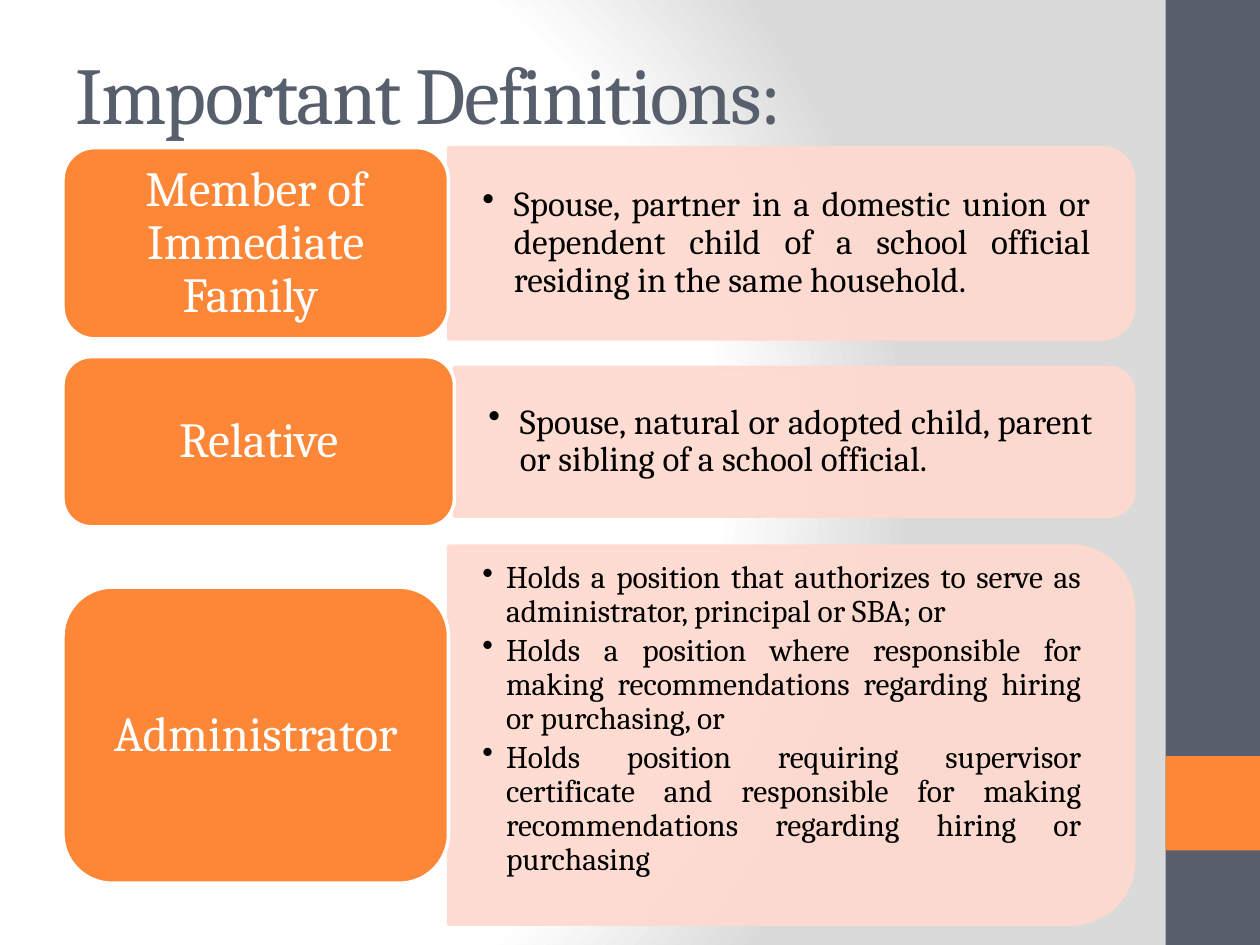
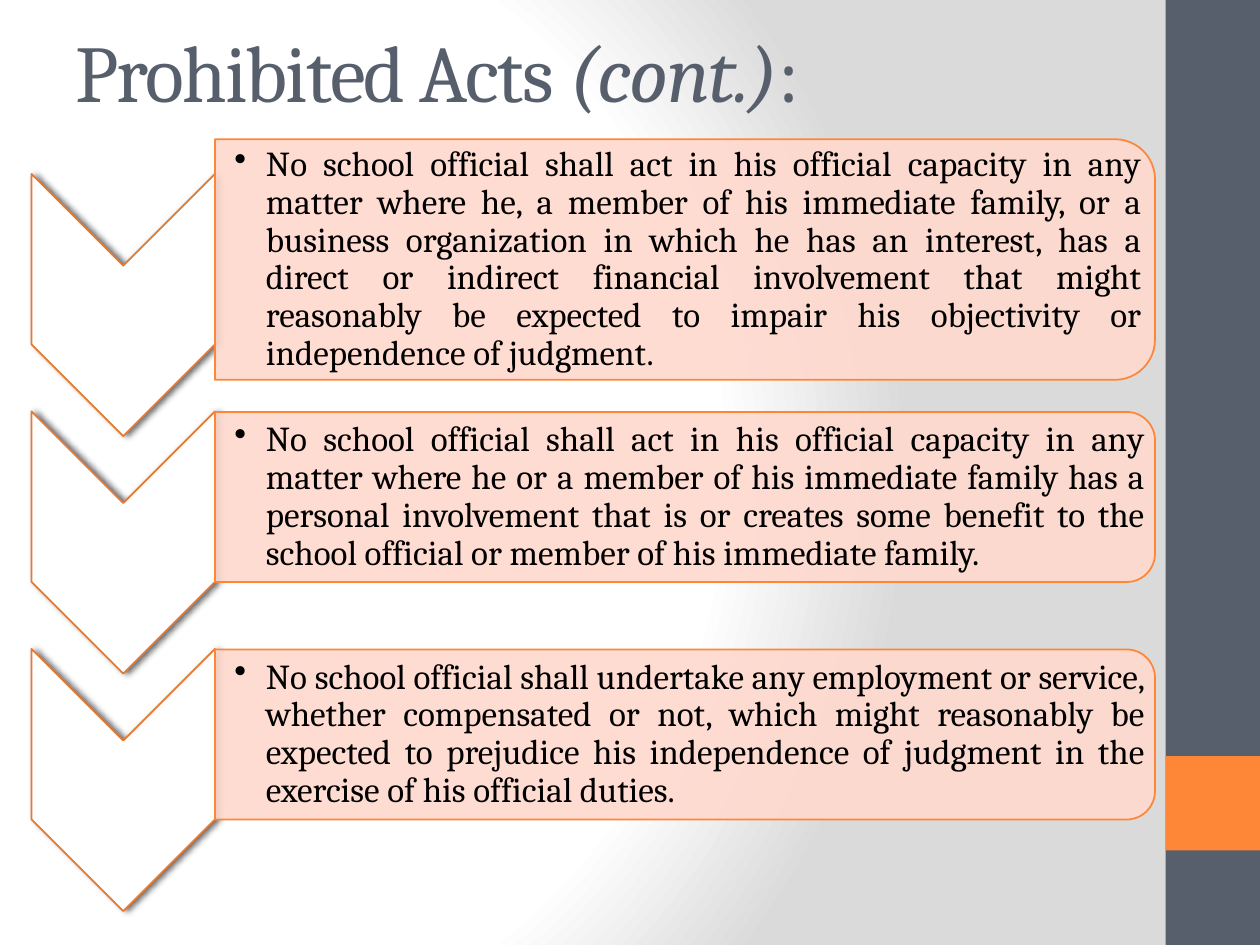
from lxml import etree
from pptx import Presentation
from pptx.dml.color import RGBColor
from pptx.enum.shapes import MSO_SHAPE
from pptx.enum.text import MSO_ANCHOR, PP_ALIGN
from pptx.oxml import parse_xml
from pptx.oxml.ns import nsdecls, qn
from pptx.util import Pt

RECT = MSO_SHAPE.RECTANGLE
ROUNDED = MSO_SHAPE.ROUNDED_RECTANGLE
TWO_ROUND_CORNERS = MSO_SHAPE.ROUND_2_SAME_RECTANGLE
CHEVRON = MSO_SHAPE.CHEVRON
MIDDLE = MSO_ANCHOR.MIDDLE
LEFT, CENTER, JUSTIFY = PP_ALIGN.LEFT, PP_ALIGN.CENTER, PP_ALIGN.JUSTIFY

FONT = "Cambria"
COLORS = {
    "slate": "575F6D",
    "orange": "FE8637",
    "dark_orange": "E77A32",
    "peach": "FFD9CE",
    "white": "FFFFFF",
    "gray": "DADADA",
    "black": "000000",
}
CORNER_INSET = 0.0488  # share of the height that a default round corner takes from text

# term, centre y, label width, label height, panel height, text size, indent,
# extra bottom inset, meanings
DEFINITIONS = [
    ("Member of Immediate Family ", 139, 220.3, 109.4, 109.4, 20, 18, 0, [
        "Spouse, partner in a domestic union or dependent child of a school "
        "official residing in the same household."]),
    ("Relative", 252.4, 223.7, 97.2, 85, 20, 18, 0, [
        "Spouse, natural or adopted child, parent or sibling of a school official."]),
    ("Administrator", 420.1, 220.3, 169.2, 216, 18, 13.5, 18, [
        "Holds a position that authorizes to serve as administrator, principal or SBA; or",
        "Holds a position where responsible for making recommendations regarding "
        "hiring or purchasing, or",
        "Holds position requiring supervisor certificate and responsible for making "
        "recommendations regarding hiring or purchasing"]),
]

# panel height, act
PROHIBITED_ACTS = [
    (137.5, "No school official shall act in his official capacity in any matter where he, "
            "a member of his immediate family, or a business organization in which he has "
            "an interest, has a direct or indirect financial involvement that might "
            "reasonably be expected to impair his objectivity or independence of judgment."),
    (97.2, "No school official shall act in his official capacity in any matter where he or "
           "a member of his immediate family has a personal involvement that is or creates "
           "some benefit to the school official or member of his immediate family."),
    (97.2, "No school official shall undertake any employment or service, whether "
           "compensated or not, which might reasonably be expected to prejudice his "
           "independence of judgment in the exercise of his official duties."),
]


def rgb(name):
    return RGBColor.from_string(COLORS[name])


def set_background(master):
    """Give every slide the white-to-gray radial gradient."""
    master.background.fill.solid()
    properties = master.element.find(".//" + qn("p:bgPr"))
    stops = "".join(
        f'<a:gs pos="{pos * 1000}"><a:srgbClr val="{COLORS[name]}"/></a:gs>'
        for pos, name in [(0, "white"), (75, "white"), (100, "gray")])
    properties.replace(properties[0], parse_xml(
        f'<a:gradFill {nsdecls("a")} rotWithShape="1"><a:gsLst>{stops}</a:gsLst>'
        '<a:path path="circle">'
        '<a:fillToRect l="20000" t="50000" r="100000" b="50000"/>'
        '</a:path></a:gradFill>'))


def add_shape(slide, preset, left, top, width, height, fill, line=None, line_width=1):
    shape = slide.shapes.add_shape(preset, Pt(left), Pt(top), Pt(width), Pt(height))
    shape.shadow.inherit = False
    shape.fill.solid()
    shape.fill.fore_color.rgb = rgb(fill)
    if line:
        shape.line.color.rgb = rgb(line)
        shape.line.width = Pt(line_width)
    else:
        shape.line.fill.background()
    return shape


def add_turned_shape(slide, preset, left, center_y, width, height, *style):
    """Add a shape turned by 90 degrees; width and height are as seen on the slide."""
    shape = add_shape(slide, preset, left + (width - height) / 2, center_y - width / 2,
                      height, width, *style)
    shape.rotation = 90
    return shape


def set_alpha(part, percent):
    for color in part.iter(qn("a:srgbClr")):
        etree.SubElement(color, qn("a:alpha")).set("val", str(percent * 1000))


def add_right_shadow(shape):
    effects = shape._element.spPr.find(qn("a:effectLst"))
    shadow = etree.SubElement(effects, qn("a:outerShdw"), blurRad=str(Pt(4)),
                              dist=str(Pt(2)), dir="0", rotWithShape="0")
    etree.SubElement(shadow, qn("a:srgbClr"), val=COLORS["black"])
    set_alpha(shadow, 60)


def set_frame(frame, insets):
    frame.word_wrap = True
    frame.vertical_anchor = MIDDLE
    (frame.margin_left, frame.margin_top,
     frame.margin_right, frame.margin_bottom) = map(Pt, insets)


def style_paragraph(paragraph, size, color, align):
    paragraph.alignment = align
    paragraph.font.name = FONT
    paragraph.font.size = Pt(size)
    paragraph.font.color.rgb = rgb(color)


def add_text_box(slide, left, top, width, height, insets):
    box = slide.shapes.add_textbox(Pt(left), Pt(top), Pt(width), Pt(height))
    set_frame(box.text_frame, insets)
    return box.text_frame


def add_bullets(frame, items, size, indent):
    for index, item in enumerate(items):
        paragraph = frame.paragraphs[0] if index == 0 else frame.add_paragraph()
        paragraph.text = item
        paragraph.line_spacing = 0.9
        paragraph.space_after = Pt(size * 0.15)
        properties = paragraph._p.get_or_add_pPr()
        properties.set("marL", str(Pt(indent)))
        properties.set("indent", str(-Pt(indent)))
        etree.SubElement(properties, qn("a:buChar"), char="•")
        style_paragraph(paragraph, size, "black", JUSTIFY)


def add_panel(slide, left, center_y, width, height, line, line_width,
              items, size, indent, insets):
    """Add a peach panel, rounded on the right, with bulleted text on it."""
    panel = add_turned_shape(slide, TWO_ROUND_CORNERS, left, center_y, width, height,
                             "peach", line, line_width)
    set_alpha(panel._element.spPr.find(qn("a:solidFill")), 90)
    if line == "peach":
        set_alpha(panel._element.spPr.find(qn("a:ln")), 90)
    corner = height * CORNER_INSET
    frame = add_text_box(slide, left, center_y - height / 2 + corner,
                         width - corner, height - 2 * corner, insets)
    add_bullets(frame, items, size, indent)


def add_label(slide, text, left, center_y, width, height):
    label = add_shape(slide, ROUNDED, left, center_y - height / 2, width, height,
                      "orange", "white", 2)
    set_frame(label.text_frame, (8.4, 4.2, 8.4, 4.2))
    paragraph = label.text_frame.paragraphs[0]
    paragraph.text = text
    paragraph.line_spacing = 0.9
    style_paragraph(paragraph, 28, "white", CENTER)


def add_titled_slide(prs, title_top, title_height, *title_parts):
    """Add a slide with the side bands; every second title part is italic."""
    slide = prs.slides.add_slide(prs.slide_layouts[6])
    add_shape(slide, RECT, 666, 0, 54, 540, "slate")
    add_shape(slide, RECT, 666, 432, 54, 54, "orange")
    frame = add_text_box(slide, 36, title_top, 600, title_height, (7.2, 3.6, 7.2, 3.6))
    title = frame.paragraphs[0]
    style_paragraph(title, 46, "slate", LEFT)
    title._p.pPr.find(qn("a:defRPr")).set("spc", "-100")
    for index, part in enumerate(title_parts):
        run = title.add_run()
        run.text = part
        if index % 2:
            run.font.italic = True
    return slide


def add_definitions_slide(prs):
    slide = add_titled_slide(prs, 21.6, 62.6, "Important Definitions:")
    left, right = 36, 647.8
    for (term, center_y, label_width, label_height, panel_height,
         size, indent, extra_bottom, meanings) in DEFINITIONS:
        panel_left = left + label_width
        add_panel(slide, panel_left, center_y, right - panel_left, panel_height,
                  "peach", 2, meanings, size, indent, (19.4, 9.8, 19.4, 9.8 + extra_bottom))
        add_label(slide, term, left, center_y, label_width, label_height)


def add_prohibited_acts_slide(prs):
    slide = add_titled_slide(prs, 12.2, 56.2, "Prohibited Acts ", "(cont.)", ":")
    first_center, pitch, chevron_drop = 148.3, 135.7, 26
    for index, (panel_height, act) in enumerate(PROHIBITED_ACTS):
        center_y = first_center + index * pitch
        chevron = add_turned_shape(slide, CHEVRON, 18, center_y + chevron_drop,
                                   104.8, 149.8, "white", "dark_orange")
        add_right_shadow(chevron)
        add_panel(slide, 122.8, center_y, 537.2, panel_height, "orange", 1,
                  [act], 20, 18, (11.2, 1, 1, 1))


def main():
    prs = Presentation()
    prs.slide_width, prs.slide_height = Pt(720), Pt(540)
    set_background(prs.slide_master)
    add_definitions_slide(prs)
    add_prohibited_acts_slide(prs)
    prs.save("out.pptx")


if __name__ == "__main__":
    main()
